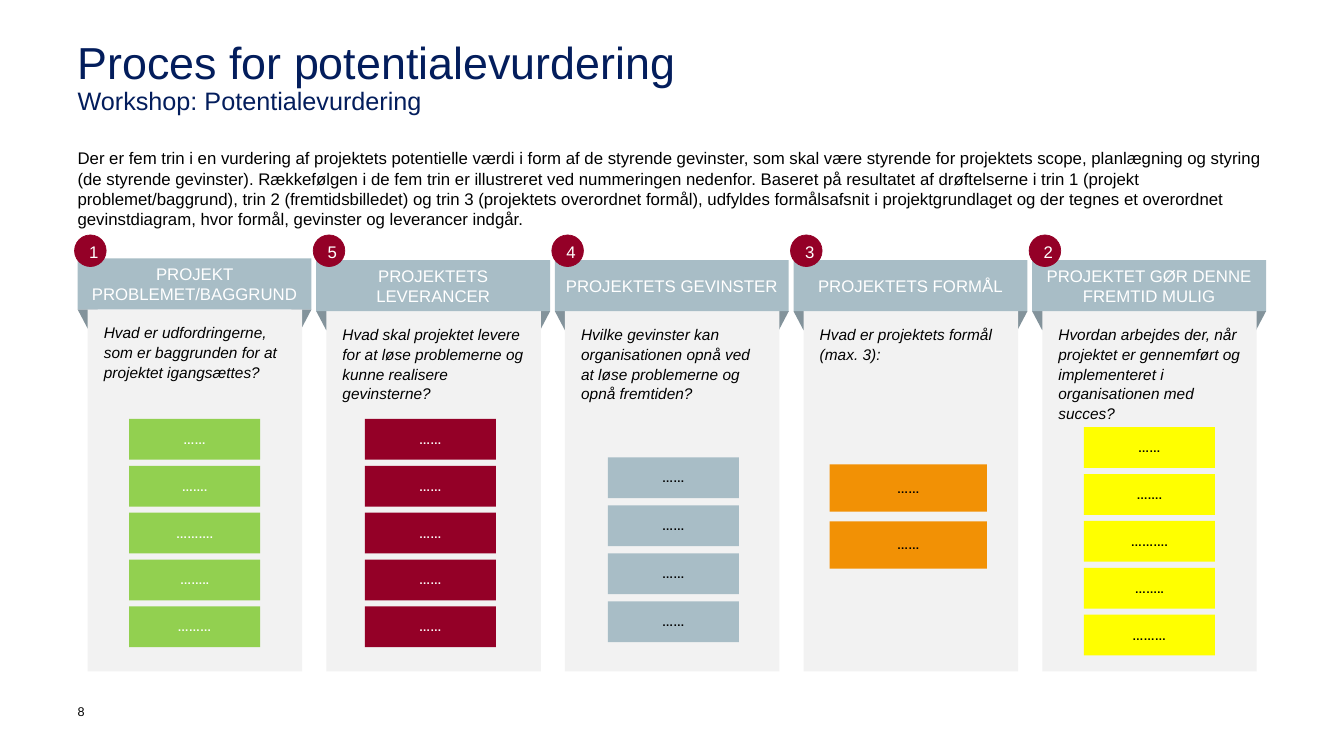
from dataclasses import dataclass

from pptx import Presentation
from pptx.dml.color import RGBColor
from pptx.enum.shapes import MSO_SHAPE as Kind
from pptx.enum.text import MSO_ANCHOR as Anchor, PP_ALIGN as Align
from pptx.shapes.autoshape import Shape
from pptx.slide import Slide
from pptx.text.text import Font
from pptx.util import Pt

FONT = "Arial"
NAVY, RED, STEEL, FOLD, PALE = "031D5C", "940027", "A8BDC6", "83939B", "F2F2F2"
GREEN, ORANGE, YELLOW = "92D050", "F29105", "FFFF00"
BLACK, WHITE = "000000", "FFFFFF"

LEFT, STEP = 55.44, 170.46  # first column and column pitch
HEAD_W, BODY_W, BODY_END = 167.04, 153.2, 479.6
FOLD_W, FOLD_H = 14.4, 13.7
DISC = 22.6
DOTS = ("……", "…….", "……….", "……..", "………")

TITLE = "Proces for potentialevurdering"
SUB = "Workshop: Potentialevurdering"
INTRO = (
    "Der er fem trin i en vurdering af projektets potentielle værdi i form af de "
    "styrende gevinster, som skal være styrende for projektets scope, planlægning og "
    "styring (de styrende gevinster). Rækkefølgen i de fem trin er illustreret ved "
    "nummeringen nedenfor. Baseret på resultatet af drøftelserne i trin 1 (projekt "
    "problemet/baggrund), trin 2 (fremtidsbilledet) og trin 3 (projektets overordnet "
    "formål), udfyldes formålsafsnit i projektgrundlaget og der tegnes et overordnet "
    "gevinstdiagram, hvor formål, gevinster og leverancer indgår."
)


@dataclass
class Stack:
    """Colored boxes under a question."""
    x: float
    y: float
    fill: str
    ink: str
    texts: tuple[str, ...]
    step: float = 33.5
    w: float = 93.6
    h: float = 29.1


@dataclass
class Column:
    num: str
    head: str
    ask: str
    stack: Stack
    top: float = 185.9


COLUMNS = [
    Column("1", "PROJEKT PROBLEMET/BAGGRUND",
           "Hvad er udfordringerne, som er baggrunden for at projektet igangsættes?",
           Stack(92.2, 299.2, GREEN, WHITE, DOTS), top=184.6),
    Column("5", "PROJEKTETS LEVERANCER",
           "Hvad skal projektet levere for at løse problemerne og kunne realisere gevinsterne?",
           Stack(260.7, 299.2, RED, WHITE, DOTS[:1] * 5)),
    Column("4", "PROJEKTETS GEVINSTER",
           "Hvilke gevinster kan organisationen opnå ved at løse problemerne og opnå fremtiden?",
           Stack(434.2, 326.7, STEEL, BLACK, DOTS[:1] * 4, step=34.3)),
    Column("3", "PROJEKTETS FORMÅL", "Hvad er projektets formål (max. 3):",
           Stack(592.6, 331.7, ORANGE, BLACK, DOTS[:1] * 2, step=40.7, w=112.4, h=33.8)),
    Column("2", "PROJEKTET GØR DENNE FREMTID MULIG",
           "Hvordan arbejdes der, når projektet er gennemført og implementeret i "
           "organisationen med succes?",
           Stack(774.2, 305.1, YELLOW, BLACK, DOTS)),
]


def rgb(hex_: str) -> RGBColor:
    return RGBColor.from_string(hex_)


def style(font: Font, size: float, ink: str, bold: bool = False, italic: bool = False) -> None:
    font.name, font.size = FONT, Pt(size)
    font.bold, font.italic = bold, italic
    font.color.rgb = rgb(ink)


def inset(shape: Shape, *sides: float) -> None:
    frame = shape.text_frame
    frame.word_wrap = True
    (frame.margin_left, frame.margin_top,
     frame.margin_right, frame.margin_bottom) = map(Pt, sides)


def block(slide: Slide, kind: Kind, x: float, y: float, w: float, h: float, fill: str) -> Shape:
    shape = slide.shapes.add_shape(kind, Pt(x), Pt(y), Pt(w), Pt(h))
    shape.shadow.inherit = False
    shape.fill.solid()
    shape.fill.fore_color.rgb = rgb(fill)
    shape.line.fill.background()
    return shape


def write(shape: Shape, text: str, size: float, ink: str, align: Align = Align.CENTER,
          anchor: Anchor = Anchor.MIDDLE, lead: float = 1.0, bold: bool = False,
          italic: bool = False) -> None:
    frame = shape.text_frame
    frame.vertical_anchor = anchor
    para = frame.paragraphs[0]
    para.text, para.alignment, para.line_spacing = text, align, lead
    style(para.font, size, ink, bold, italic)


def label(slide: Slide, x: float, y: float, w: float, h: float, text: str, size: float) -> None:
    box = slide.shapes.add_textbox(Pt(x), Pt(y), Pt(w), Pt(h))
    inset(box, 0, 0, 0, 0)
    write(box, text, size, BLACK, Align.LEFT, Anchor.TOP)


def title(slide: Slide) -> None:
    shape = slide.shapes.title
    shape.left, shape.top, shape.width, shape.height = map(Pt, (LEFT, 28.8, 849.6, 73.4))
    inset(shape, 0, 0, 81.4, 0)
    shape.text_frame.vertical_anchor = Anchor.TOP
    para = shape.text_frame.paragraphs[0]
    para.alignment, para.line_spacing = Align.LEFT, 0.9
    for text, size in ((TITLE, 32), (SUB, 18)):
        if para.runs:
            para.add_line_break()
        run = para.add_run()
        run.text = text
        style(run.font, size, NAVY)


def column(slide: Slide, x: float, col: Column) -> None:
    # Folded corners
    base = col.top + 36.4
    for side in (x, x + HEAD_W - FOLD_W):
        block(slide, Kind.ISOSCELES_TRIANGLE, side, base, FOLD_W, FOLD_H, FOLD).rotation = 180

    # Question panel and heading
    body = block(slide, Kind.RECTANGLE, x + FOLD_W / 2, base, BODY_W, BODY_END - base, PALE)
    inset(body, 11.5, 8.6, 11.5, 5.8)
    write(body, col.ask, 11, BLACK, Align.LEFT, Anchor.TOP, 1.08, italic=True)
    head = block(slide, Kind.RECTANGLE, x, col.top, HEAD_W, 36.4, STEEL)
    inset(head, 7.2, 3.6, 7.2, 3.6)
    write(head, col.head, 12, WHITE)

    # Step number
    disc = block(slide, Kind.OVAL, x - 2.2, 167.8, DISC, DISC, RED)
    disc.line.color.rgb = rgb(RED)
    disc.line.width = Pt(0.5)
    inset(disc, 7.2, 3.6, 7.2, 3.6)
    write(disc, col.num, 12, WHITE, lead=1.08)

    # Boxes to fill in
    pile = col.stack
    for i, text in enumerate(pile.texts):
        box = block(slide, Kind.RECTANGLE, pile.x, pile.y + i * pile.step,
                    pile.w, pile.h, pile.fill)
        inset(box, 2.9, 2.9, 2.9, 2.9)
        write(box, text, 8, pile.ink, lead=1.08, bold=True)


def main() -> None:
    deck = Presentation()
    deck.slide_width, deck.slide_height = Pt(960), Pt(540)
    slide = deck.slides.add_slide(deck.slide_layouts[5])
    title(slide)
    label(slide, LEFT, 105.8, 849.6, 58.3, INTRO, 12)
    for i, col in enumerate(COLUMNS):
        column(slide, LEFT + i * STEP, col)
    label(slide, LEFT, 502.6, 22.3, 28, "8", 9)
    deck.save("out.pptx")


if __name__ == "__main__":
    main()
